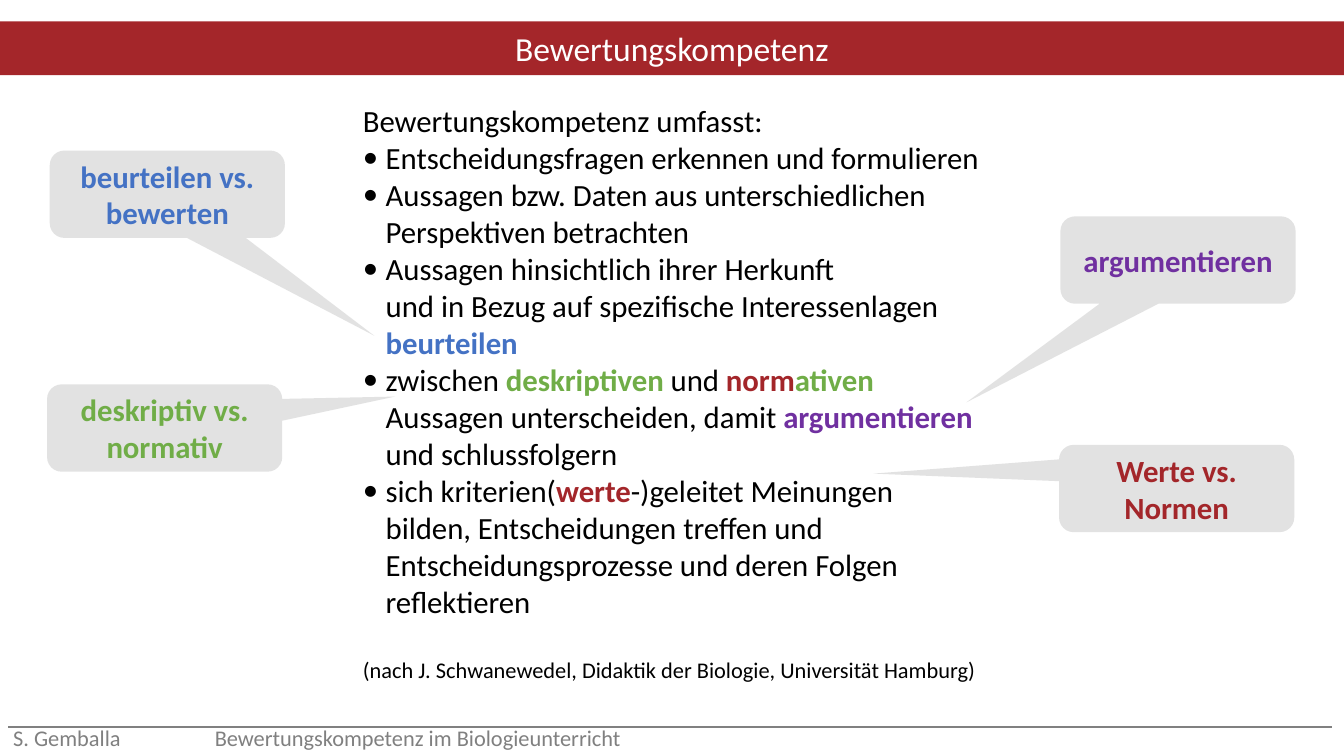
"""Build the slide "Bewertungskompetenz" with its competence list and four callouts."""
from lxml import etree
from pptx import Presentation
from pptx.dml.color import RGBColor
from pptx.enum import shapes, text
from pptx.oxml import ns
from pptx.util import Inches, Pt

FONT = "Calibri"
BLACK = RGBColor(0x00, 0x00, 0x00)
WHITE = RGBColor(0xFF, 0xFF, 0xFF)
GRAY = RGBColor(0x80, 0x80, 0x80)
LIGHT_GRAY = RGBColor(0xBF, 0xBF, 0xBF)
BAR_RED = RGBColor(0xA4, 0x26, 0x2A)
RED = RGBColor(0xA3, 0x26, 0x2A)
BLUE = RGBColor(0x44, 0x72, 0xC4)
GREEN = RGBColor(0x70, 0xAD, 0x47)
PURPLE = RGBColor(0x70, 0x30, 0xA0)


def add_run(paragraph, content, size, color, bold=False):
    run = paragraph.add_run()
    run.text = content
    run.font.name = FONT
    run.font.size = Pt(size)
    run.font.bold = bold
    run.font.color.rgb = color


def place(shape, left, top, width, height):
    shape.left, shape.top = Inches(left), Inches(top)
    shape.width, shape.height = Inches(width), Inches(height)


presentation = Presentation()
presentation.slide_width = Inches(10)
presentation.slide_height = Inches(10 * 9 / 16)
slide = presentation.slides.add_slide(presentation.slide_layouts[1])

title = slide.shapes.title
place(title, 0, 0.16, 10, 0.4)
title.fill.solid()
title.fill.fore_color.rgb = BAR_RED
title.text_frame.auto_size = text.MSO_AUTO_SIZE.NONE
title.text_frame.vertical_anchor = text.MSO_ANCHOR.MIDDLE
title.text_frame.paragraphs[0].alignment = text.PP_ALIGN.CENTER
add_run(title.text_frame.paragraphs[0], "Bewertungskompetenz", 18, WHITE)

body = slide.placeholders[1]
place(body, 2.6, 0.71, 4.8, 4.47)
body.fill.solid()
body.fill.fore_color.rgb = WHITE
body.text_frame.auto_size = text.MSO_AUTO_SIZE.NONE
body.text_frame.vertical_anchor = text.MSO_ANCHOR.TOP

bullets = [
    [("Entscheidungsfragen erkennen und formulieren", BLACK)],
    [("Aussagen bzw. Daten aus unterschiedlichen Perspektiven betrachten", BLACK)],
    [("Aussagen hinsichtlich ihrer Herkunft", BLACK), None,
     ("und in Bezug auf spezifische Interessenlagen ", BLACK), ("beurteilen", BLUE)],
    [("zwischen ", BLACK), ("deskriptiven", GREEN), (" und ", BLACK), ("norm", RED),
     ("ativen", GREEN), (" Aussagen unterscheiden, damit ", BLACK),
     ("argumentieren", PURPLE), (" und schlussfolgern", BLACK)],
    [("sich kriterien(", BLACK), ("werte", RED),
     ("-)geleitet Meinungen bilden, Entscheidungen treffen und "
      "Entscheidungsprozesse und deren Folgen reflektieren", BLACK)],
]
intro = [("Bewertungskompetenz umfasst:", BLACK)]
credit = [("(nach J. Schwanewedel, Didaktik der Biologie, Universität Hamburg)", BLACK)]

for index, parts in enumerate([intro, *bullets, credit]):
    paragraph = body.text_frame.paragraphs[0] if index == 0 else body.text_frame.add_paragraph()
    paragraph.space_before = Pt(20 if parts is credit else 0)
    properties = paragraph._p.get_or_add_pPr()
    bulleted = parts in bullets
    indent = Inches(0.17 if bulleted else 0)
    properties.set("marL", str(indent))
    properties.set("indent", str(-indent))
    if bulleted:
        etree.SubElement(properties, ns.qn("a:buFont"), typeface=FONT)
        etree.SubElement(properties, ns.qn("a:buChar"), char="•")
    else:
        etree.SubElement(properties, ns.qn("a:buNone"))
    for part in parts:
        if part is None:
            paragraph.add_line_break()
        else:
            content, color = part
            add_run(paragraph, content, 12 if parts is credit else 16.5, color, color != BLACK)

callouts = [
    ("argumentieren", PURPLE, 7.89, 1.61, -0.9, 1.63),
    ("deskriptiv vs. normativ", GREEN, 0.35, 2.86, 0.98, -0.36),
    ("Werte vs. Normen", RED, 7.88, 3.31, -1.29, -0.17),
    ("beurteilen vs. bewerten", BLUE, 0.37, 1.12, 0.88, 1.62),
]
for content, color, left, top, tip_x, tip_y in callouts:
    callout = slide.shapes.add_shape(
        shapes.MSO_SHAPE.ROUNDED_RECTANGULAR_CALLOUT,
        Inches(left), Inches(top), Inches(1.75), Inches(0.65))
    callout.adjustments[0] = tip_x
    callout.adjustments[1] = tip_y
    callout.shadow.inherit = False
    callout.line.fill.background()
    callout.fill.solid()
    callout.fill.fore_color.rgb = LIGHT_GRAY
    fill_color = callout._element.spPr.find(".//" + ns.qn("a:srgbClr"))
    etree.SubElement(fill_color, ns.qn("a:alpha"), val="44000")
    callout.text_frame.word_wrap = True
    callout.text_frame.vertical_anchor = text.MSO_ANCHOR.MIDDLE
    paragraph = callout.text_frame.paragraphs[0]
    paragraph.alignment = text.PP_ALIGN.CENTER
    add_run(paragraph, content, 16.5, color, True)

rule = slide.shapes.add_connector(
    shapes.MSO_CONNECTOR.STRAIGHT, Inches(0.06), Inches(5.41), Inches(9.91), Inches(5.41))
rule.line.color.rgb = GRAY
rule.line.width = Pt(1)
etree.SubElement(rule._element.spPr, ns.qn("a:effectLst"))

footer = slide.shapes.add_textbox(Inches(0), Inches(5.34), Inches(10), Inches(0.28))
footer.text_frame.word_wrap = True
paragraph = footer.text_frame.paragraphs[0]
tab_list = etree.SubElement(paragraph._p.get_or_add_pPr(), ns.qn("a:tabLst"))
etree.SubElement(tab_list, ns.qn("a:tab"), pos=str(Inches(1.5)), algn="l")
add_run(paragraph, "S. Gemballa\tBewertungskompetenz im Biologieunterricht", 12, GRAY)

presentation.save("out.pptx")
